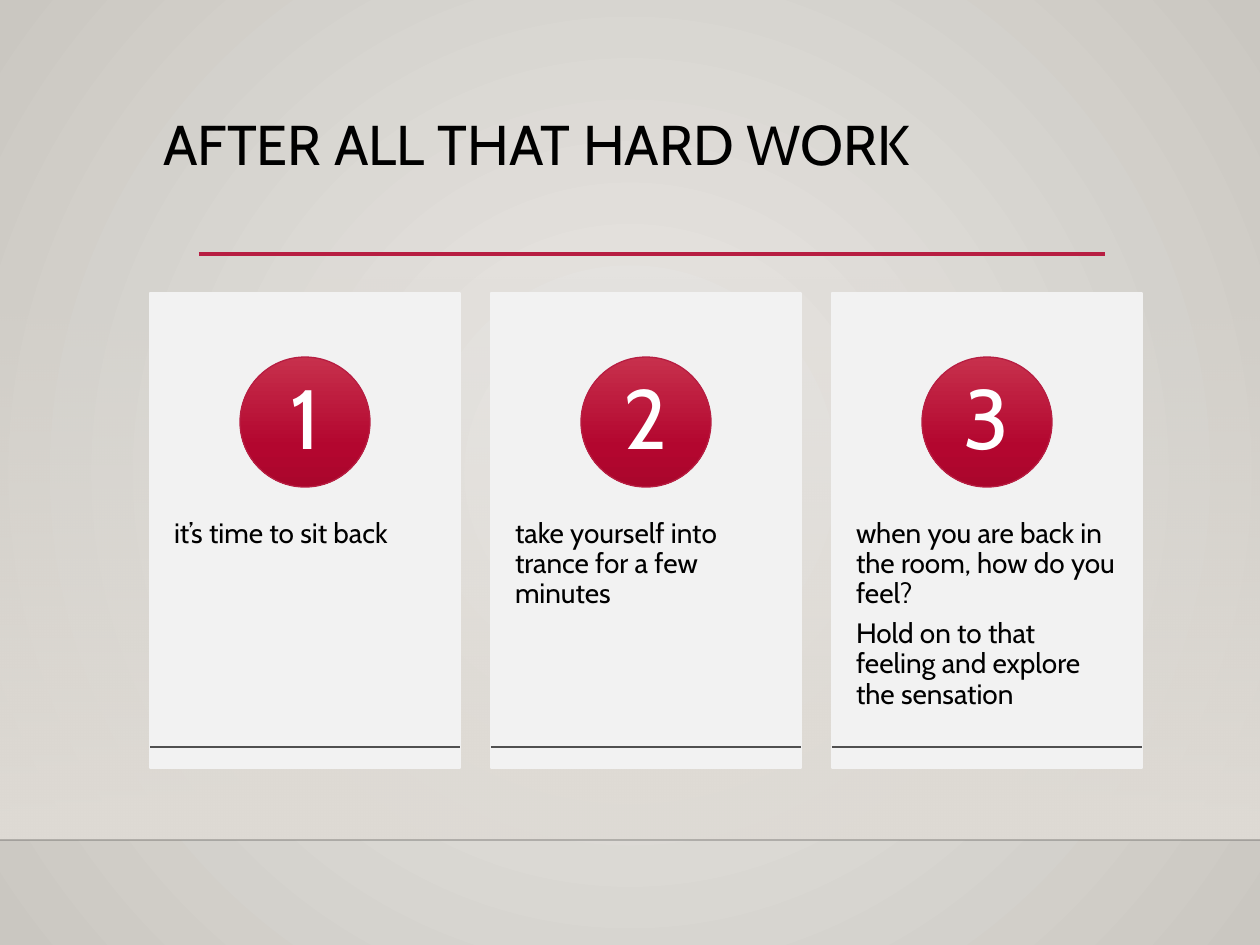
from lxml import etree
from pptx import Presentation
from pptx import util as u
from pptx.dml.color import RGBColor
from pptx.enum import shapes, text
from pptx.oxml import parse_xml
from pptx.oxml.ns import nsdecls, qn

BLACK = RGBColor(0x00, 0x00, 0x00)
WHITE = RGBColor(0xFF, 0xFF, 0xFF)
CARD = RGBColor(0xF2, 0xF2, 0xF2)
CRIMSON = RGBColor(0xB7, 0x1E, 0x42)
RULE = RGBColor(0x50, 0x50, 0x50)
SAND = RGBColor(0xDF, 0xDB, 0xD5)
GLOW = RGBColor(0xEC, 0xEA, 0xE7)
EDGE = RGBColor(0xCA, 0xC7, 0xC1)
BADGE_STOPS = [(0, RGBColor(0xC7, 0x30, 0x4C), 100),
               (69, RGBColor(0xB3, 0x06, 0x2F), 100),
               (100, RGBColor(0xAA, 0x06, 0x2C), 100)]

WIDTH, HEIGHT = 1260, 945
CARD_LEFT, CARD_TOP, CARD_WIDTH, CARD_HEIGHT, CARD_PITCH = 150, 293, 310, 475, 341
BADGE_SIZE = 130
CARDS = [
    ["it’s time to sit back"],
    ["take yourself into trance for a few minutes"],
    ["when you are back in the room, how do you feel?",
     "Hold on to that feeling and explore the sensation"],
]
DOWNWARD = '<a:lin ang="5400000" scaled="0"/>'
RADIAL = ('<a:path path="circle"><a:fillToRect l="50000" t="50000" '
          'r="50000" b="50000"/></a:path>')


def px(value):
    return u.Emu(round(value * 914400 / 126))


def gradient(stops, direction):
    """Gradient fill from (percent, colour, opacity percent) stops."""
    marks = "".join(
        f'<a:gs pos="{place * 1000}"><a:srgbClr val="{color}">'
        f'<a:alpha val="{opacity * 1000}"/></a:srgbClr></a:gs>'
        for place, color, opacity in stops)
    return (f'<a:gradFill {nsdecls("a")} rotWithShape="1">'
            f'<a:gsLst>{marks}</a:gsLst>{direction}</a:gradFill>')


class SlideBuilder:
    font_name = "Cabin"
    line_spacing = 0.9

    def __init__(self, slide):
        self.slide = slide

    def background(self, stops):
        self.slide.element.cSld.insert(0, parse_xml(
            f'<p:bg {nsdecls("p", "a")}><p:bgPr>{gradient(stops, RADIAL)}'
            '<a:effectLst/></p:bgPr></p:bg>'))

    def shape(self, kind, left, top, width, height, fill=None, stops=None, line=None):
        shape = self.slide.shapes.add_shape(
            kind, px(left), px(top), px(width), px(height))
        shape.shadow.inherit = False
        if stops:
            geometry = shape.element.spPr.find(qn("a:prstGeom"))
            geometry.addnext(parse_xml(gradient(stops, DOWNWARD)))
        else:
            shape.fill.solid()
            shape.fill.fore_color.rgb = fill
        if line is None:
            shape.line.fill.background()
        else:
            shape.line.color.rgb = line
            shape.line.width = u.Pt(0.75)
        return shape

    def rule(self, left, right, y, color, weight, opacity=100):
        line = self.slide.shapes.add_connector(
            shapes.MSO_CONNECTOR.STRAIGHT, px(left), px(y), px(right), px(y))
        line.line.color.rgb = color
        line.line.width = u.Pt(weight)
        properties = line.element.spPr
        etree.SubElement(properties, qn("a:effectLst"))
        if opacity < 100:
            solid = properties.find(".//" + qn("a:srgbClr"))
            etree.SubElement(solid, qn("a:alpha"), val=str(opacity * 1000))

    def set_text(self, shape, paragraphs, size, color, align=text.PP_ALIGN.LEFT,
                 anchor=text.MSO_ANCHOR.TOP, insets=(13, 6), space_after=0):
        frame = shape.text_frame
        frame.word_wrap = True
        frame.auto_size = text.MSO_AUTO_SIZE.NONE
        frame.vertical_anchor = anchor
        frame.margin_left = frame.margin_right = px(insets[0])
        frame.margin_top = frame.margin_bottom = px(insets[1])
        frame.text = "\n".join(paragraphs)
        for paragraph in frame.paragraphs:
            paragraph.alignment = align
            paragraph.line_spacing = self.line_spacing
            paragraph.space_before = u.Pt(0)
            paragraph.space_after = u.Pt(space_after)
            paragraph.font.name = self.font_name
            paragraph.font.size = u.Pt(size)
            paragraph.font.color.rgb = color

    def title(self, words, left, top, width, height):
        title = self.slide.shapes.title
        title.left, title.top = px(left), px(top)
        title.width, title.height = px(width), px(height)
        self.set_text(title, [words], 32, BLACK)

    def card(self, number, left, paragraphs):
        self.shape(shapes.MSO_SHAPE.RECTANGLE, left, CARD_TOP, CARD_WIDTH,
                   CARD_HEIGHT, fill=CARD, line=CARD)
        body = self.slide.shapes.add_textbox(
            px(left), px(CARD_TOP + 181), px(CARD_WIDTH), px(285))
        self.set_text(body, paragraphs, 16, BLACK, insets=(24, 45), space_after=5.6)
        badge = self.shape(
            shapes.MSO_SHAPE.OVAL, left + (CARD_WIDTH - BADGE_SIZE) // 2,
            CARD_TOP + 64, BADGE_SIZE, BADGE_SIZE, stops=BADGE_STOPS, line=CRIMSON)
        self.set_text(badge, [str(number)], 48, WHITE, text.PP_ALIGN.CENTER,
                      text.MSO_ANCHOR.MIDDLE, insets=(10, 1))
        self.rule(left, left + CARD_WIDTH, CARD_TOP + 454, RULE, 0.75)


def main():
    presentation = Presentation()
    presentation.slide_width, presentation.slide_height = px(WIDTH), px(HEIGHT)
    builder = SlideBuilder(
        presentation.slides.add_slide(presentation.slide_layouts[5]))

    # Backdrop: radial glow, fading band and horizon
    builder.background([(0, GLOW, 100), (100, EDGE, 100)])
    builder.shape(shapes.MSO_SHAPE.RECTANGLE, 0, 277, WIDTH, 563,
                  stops=[(0, SAND, 0), (100, SAND, 100)])
    builder.rule(0, WIDTH, 840, BLACK, 1, opacity=20)

    # Title and its underline
    builder.rule(199, 1105, 254, CRIMSON, 2.5)
    builder.title("AFTER ALL THAT HARD WORK", 150, 111, 993, 145)

    # Three numbered cards
    for index, paragraphs in enumerate(CARDS):
        builder.card(index + 1, CARD_LEFT + index * CARD_PITCH, paragraphs)

    presentation.save("out.pptx")


if __name__ == "__main__":
    main()
